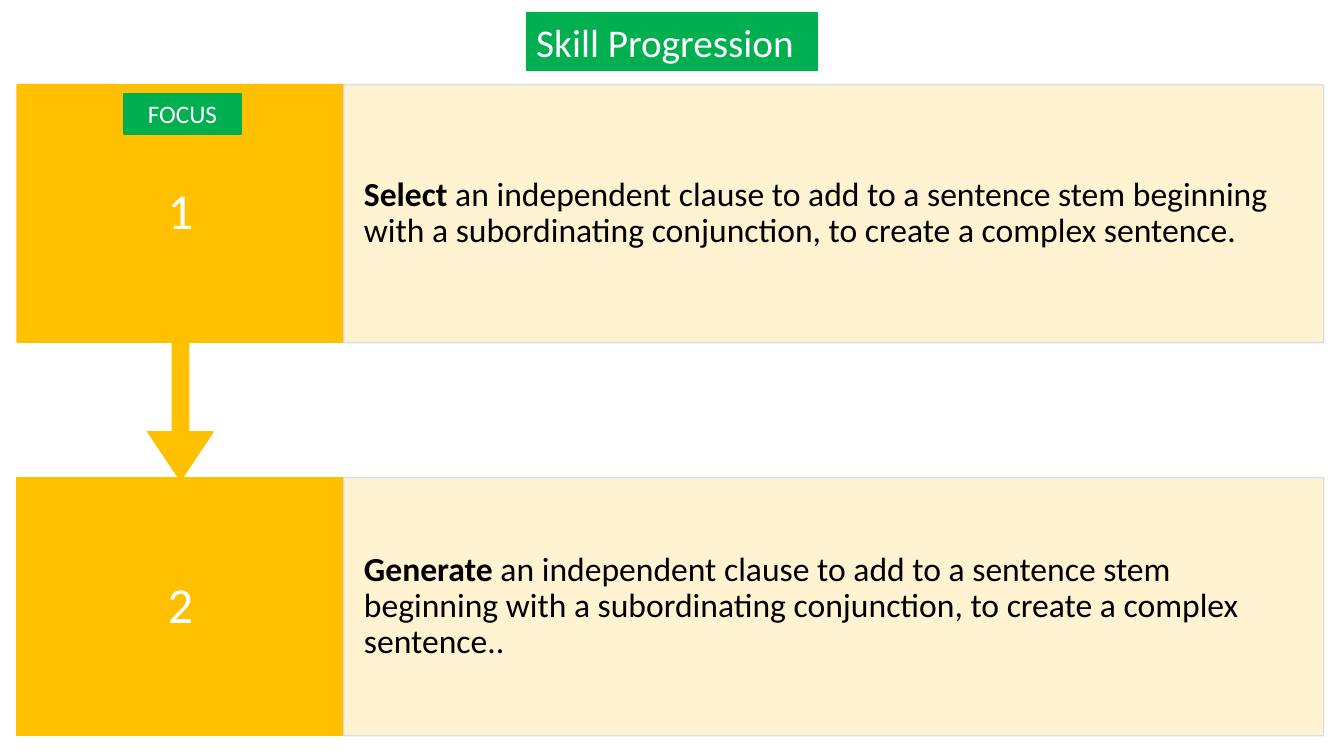
from lxml import etree
from pptx import Presentation
from pptx.dml.color import RGBColor
from pptx.enum.shapes import MSO_SHAPE
from pptx.enum.text import MSO_ANCHOR, MSO_AUTO_SIZE, PP_ALIGN
from pptx.oxml.ns import qn
from pptx.util import Inches, Pt

RECT, CALLOUT = MSO_SHAPE.RECTANGLE, MSO_SHAPE.DOWN_ARROW_CALLOUT
LEFT, CENTER = PP_ALIGN.LEFT, PP_ALIGN.CENTER
MIDDLE, TOP = MSO_ANCHOR.MIDDLE, MSO_ANCHOR.TOP
GROW = MSO_AUTO_SIZE.SHAPE_TO_FIT_TEXT

STEPS = [
    ("1", "Select", " an independent clause to add to a sentence stem beginning with a "
     "subordinating conjunction, to create a complex sentence."),
    ("2", "Generate", " an independent clause to add to a sentence stem beginning with a "
     "subordinating conjunction, to create a complex sentence.."),
]
LABELS = [
    ("Skill Progression", (5.22, 0.13, 2.89, 0.57), "title", LEFT),
    ("FOCUS", (1.23, 0.93, 1.16, 0.4), "tag", CENTER),
]
THEME = {
    "font": "Calibri",
    "gold": "FFC000", "cream": "FFF2CC", "edge": "D2DEEF",
    "green": "00B050", "white": "FFFFFF", "black": "000000",
    "number": 36, "title": 28, "body": 24, "tag": 18,
}
ROW_LEFT, ROW_TOP, ROW_PITCH, ROW_H = 0.17, 0.84, 3.9, 2.56
NUMBER_W, PANEL_W = 3.24, 9.72
CALLOUT_H = 3.93
CALLOUT_ADJ = (0.05, 0.1, 0.15, 0.65)
NUMBER_INSETS, PANEL_INSETS, LABEL_INSETS = (0.23, 0.28), (0.2, 0.33), (0.1, 0.05)


def color(name):
    return RGBColor.from_string(THEME[name])


def add_box(s, kind, at, fill, line, runs, size, ink, align, anchor, insets, spacing=None):
    sp = s.shapes.add_shape(kind, *map(Inches, at))
    sp.shadow.inherit = False
    sp.fill.solid()
    sp.fill.fore_color.rgb = color(fill)
    sp.line.color.rgb = color(line)
    sp.line.width = Pt(1)
    tf = sp.text_frame
    tf.word_wrap = True
    tf.vertical_anchor = anchor
    tf.margin_left = tf.margin_right = Inches(insets[0])
    tf.margin_top = tf.margin_bottom = Inches(insets[1])
    p = tf.paragraphs[0]
    p.alignment = align
    p.line_spacing = spacing
    for text, bold in runs:
        r = p.add_run()
        r.text = text
        r.font.name = THEME["font"]
        r.font.size = Pt(THEME[size])
        r.font.bold = bold
        r.font.color.rgb = color(ink)
    return sp


def make_translucent(sp, percent):
    for clr in sp._element.spPr.iter(qn("a:srgbClr")):
        etree.SubElement(clr, qn("a:alpha")).set("val", str(percent * 1000))


def add_step(s, index, step):
    number, verb, rest = step
    top = ROW_TOP + index * ROW_PITCH
    is_last = index == len(STEPS) - 1
    kind, height = (RECT, ROW_H) if is_last else (CALLOUT, CALLOUT_H)
    sp = add_box(s, kind, (ROW_LEFT, top, NUMBER_W, height), "gold", "gold",
                 [(number, False)], "number", "white", CENTER, MIDDLE, NUMBER_INSETS, 0.9)
    if not is_last:
        for i, value in enumerate(CALLOUT_ADJ):
            sp.adjustments[i] = value
    panel = add_box(s, RECT, (ROW_LEFT + NUMBER_W, top, PANEL_W, ROW_H), "cream", "edge",
                    [(verb, True), (rest, False)], "body", "black", LEFT, MIDDLE,
                    PANEL_INSETS, 0.9)
    make_translucent(panel, 90)


def main():
    prs = Presentation()
    prs.slide_width, prs.slide_height = Inches(13.33), Inches(7.5)
    s = prs.slides.add_slide(prs.slide_layouts[6])
    for index, step in reversed(list(enumerate(STEPS))):
        add_step(s, index, step)
    for text, at, size, align in LABELS:
        sp = add_box(s, RECT, at, "green", "green", [(text, False)], size, "white",
                     align, TOP, LABEL_INSETS)
        sp.text_frame.auto_size = GROW
    prs.save("out.pptx")


if __name__ == "__main__":
    main()
